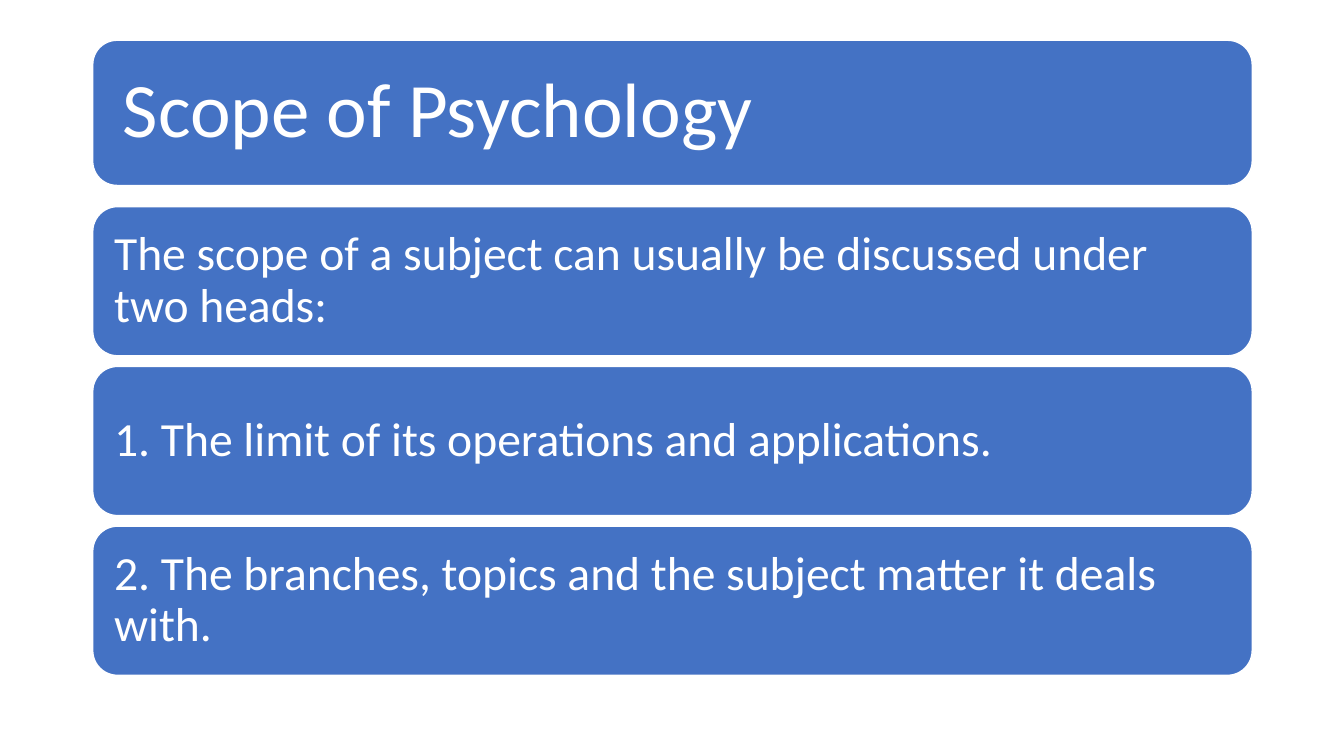
from pptx import Presentation
from pptx.dml.color import RGBColor
from pptx.enum.shapes import MSO_SHAPE as SHAPE
from pptx.enum.text import MSO_ANCHOR as ANCHOR, PP_ALIGN as ALIGN
from pptx.util import Inches, Pt

COLORS = {"bar": "4472C4", "white": "FFFFFF"}

prs = Presentation()
prs.slide_width, prs.slide_height = Inches(13.33), Inches(7.5)
s = prs.slides.add_slide(prs.slide_layouts[6])


def add_bar(top, height, text, size, inset):
    sp = s.shapes.add_shape(SHAPE.ROUNDED_RECTANGLE, Inches(0.92), Inches(top),
                            Inches(11.5), Inches(height))
    sp.shadow.inherit = False
    sp.fill.solid()
    sp.fill.fore_color.rgb = RGBColor.from_string(COLORS["bar"])
    sp.line.color.rgb = RGBColor.from_string(COLORS["white"])
    sp.line.width = Pt(1)

    tf = sp.text_frame
    tf.word_wrap = True
    tf.vertical_anchor = ANCHOR.MIDDLE
    tf.margin_left = tf.margin_right = Inches(inset)
    tf.margin_top = tf.margin_bottom = Inches(inset)
    p = tf.paragraphs[0]
    p.alignment = ALIGN.LEFT
    p.line_spacing = 0.9
    r = p.add_run()
    r.text = text
    r.font.name = "Calibri"
    r.font.size = Pt(size)
    r.font.color.rgb = RGBColor.from_string(COLORS["white"])


# Title bar
add_bar(0.4, 1.44, "Scope of Psychology", 55, 0.23)

# Content bars, evenly stacked
points = [
    "The scope of a subject can usually be discussed under two heads:",
    "1. The limit of its operations and applications.",
    "2. The branches, topics and the subject matter it deals with.",
]
for i, point in enumerate(points):
    add_bar(2.05 + i * 1.585, 1.48, point, 34, 0.14)

prs.save("out.pptx")
